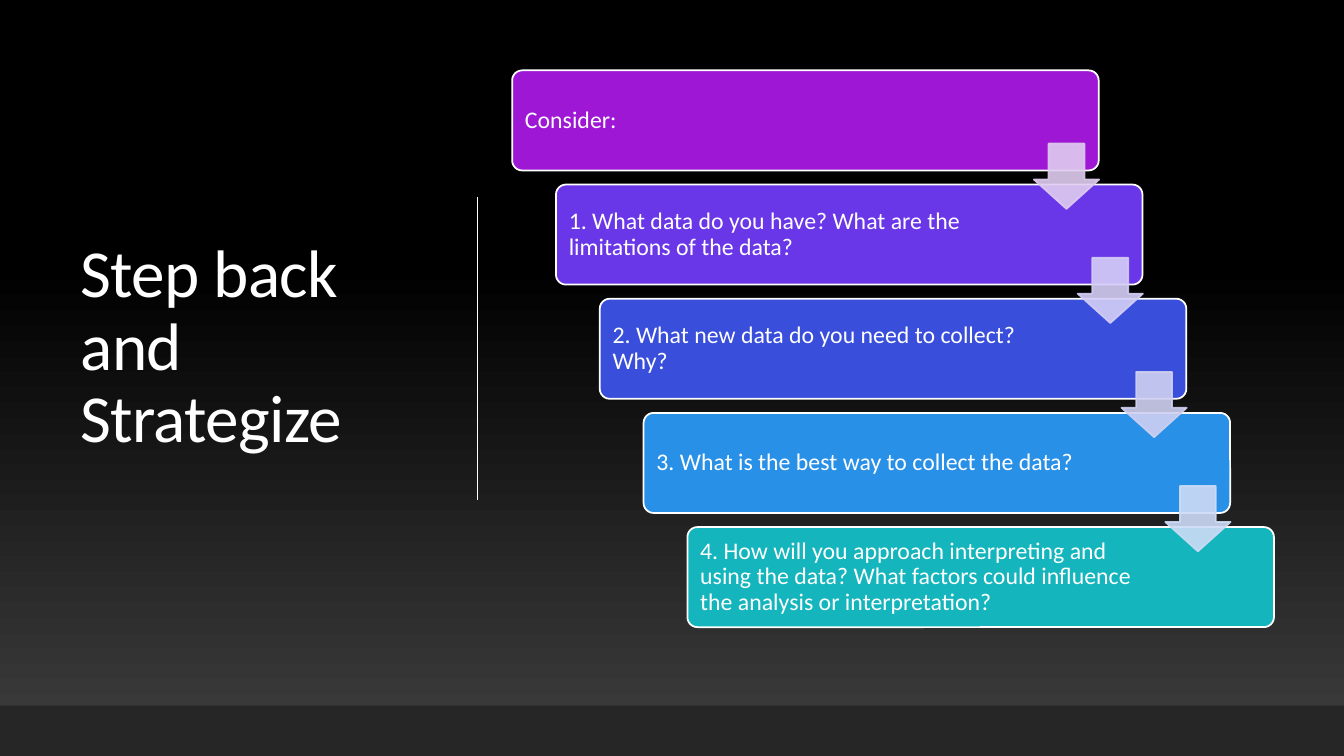
from dataclasses import dataclass

from lxml import etree
from pptx import Presentation
from pptx.dml.color import RGBColor
from pptx.enum.shapes import MSO_CONNECTOR, MSO_SHAPE
from pptx.enum.text import MSO_ANCHOR, MSO_AUTO_SIZE, PP_ALIGN
from pptx.oxml.ns import qn
from pptx.util import Pt

RECT = MSO_SHAPE.RECTANGLE
ROUND_RECT = MSO_SHAPE.ROUNDED_RECTANGLE
DOWN_ARROW = MSO_SHAPE.DOWN_ARROW
STRAIGHT = MSO_CONNECTOR.STRAIGHT
LEFT = PP_ALIGN.LEFT
MIDDLE = MSO_ANCHOR.MIDDLE
NO_FIT = MSO_AUTO_SIZE.NONE

SLIDE_W, SLIDE_H = 960, 540


@dataclass(frozen=True)
class Theme:
    font: str = "Calibri"
    title_size: float = 48
    body_size: float = 17
    text: str = "FFFFFF"
    line: str = "FFFFFF"
    glow: str = "3F3F3F"
    dark: str = "000000"
    footer: str = "262626"
    cards: tuple = ("9D17D5", "6A37E8", "394EDB", "2990E7", "14B5BC")
    arrows: tuple = ("DFCCEF", "D4CEF6", "CED0F1", "CDDBF6")


def rgb(value):
    return RGBColor.from_string(value)


def write_text(tf, text, *, font, size, color, insets, tracking=None):
    tf.word_wrap = True
    tf.auto_size = NO_FIT
    tf.vertical_anchor = MIDDLE
    tf.margin_left, tf.margin_top, tf.margin_right, tf.margin_bottom = map(Pt, insets)
    p = tf.paragraphs[0]
    p.alignment = LEFT
    p.line_spacing = 0.9
    r = p.add_run()
    r.text = text
    r.font.name = font
    r.font.size = Pt(size)
    r.font.color.rgb = rgb(color)
    if tracking is not None:
        r.font._element.set("spc", str(round(tracking * 100)))


class Deck:
    def __init__(self, prs, theme):
        self.theme = theme
        self.s = prs.slides.add_slide(prs.slide_layouts[5])

    def background(self):
        fill = self.s.background.fill
        fill.gradient()
        fill.gradient_angle = 90
        stops = ((0, self.theme.glow), (0.65, self.theme.dark))
        for stop, (position, color) in zip(fill.gradient_stops, stops):
            stop.position = position
            stop.color.rgb = rgb(color)

    def title(self, text, x, y, w, h):
        sp = self.s.shapes.title
        sp.left, sp.top, sp.width, sp.height = map(Pt, (x, y, w, h))
        write_text(sp.text_frame, text, font=self.theme.font, size=self.theme.title_size,
                   color=self.theme.text, insets=(7.2, 3.6, 7.2, 3.6), tracking=-0.5)

    def rule(self, x1, y1, x2, y2):
        sp = self.s.shapes.add_connector(STRAIGHT, Pt(x1), Pt(y1), Pt(x2), Pt(y2))
        sp.line.color.rgb = rgb(self.theme.line)
        sp.line.width = Pt(1)
        etree.SubElement(sp._element.spPr, qn("a:effectLst"))

    def shape(self, kind, x, y, w, h, fill, line=None, adjust=()):
        sp = self.s.shapes.add_shape(kind, Pt(x), Pt(y), Pt(w), Pt(h))
        sp.shadow.inherit = False
        for i, value in enumerate(adjust):
            sp.adjustments[i] = value
        sp.fill.solid()
        sp.fill.fore_color.rgb = rgb(fill)
        if line:
            sp.line.color.rgb = rgb(line)
            sp.line.width = Pt(1.25)
        else:
            sp.line.fill.background()
        return sp

    def card(self, text, x, y, w, h, fill):
        sp = self.shape(ROUND_RECT, x, y, w, h, fill, self.theme.line, (0.1,))
        write_text(sp.text_frame, text, font=self.theme.font, size=self.theme.body_size,
                   color=self.theme.text, insets=(7.2, 7.2, 85, 7.2))

    def arrow(self, x, y, size, color):
        sp = self.shape(DOWN_ARROW, x, y, size, size, color, color, (0.55, 0.45))
        for clr in sp._element.spPr.iter(qn("a:srgbClr")):
            etree.SubElement(clr, qn("a:alpha")).set("val", "90000")


def main():
    prs = Presentation()
    prs.slide_width, prs.slide_height = Pt(SLIDE_W), Pt(SLIDE_H)
    theme = Theme()
    deck = Deck(prs, theme)
    deck.background()
    deck.title("Step back and Strategize", 50.4, 49.7, 265.7, 398.2)
    deck.rule(341.3, 141, 341.3, 357)
    deck.shape(RECT, 0, 504, SLIDE_W, 36, theme.footer)

    steps = (
        "Consider:",
        "1. What data do you have? What are the limitations of the data?",
        "2. What new data do you need to collect? Why?",
        "3. What is the best way to collect the data?",
        "4. How will you approach interpreting and using the data? "
        "What factors could influence the analysis or interpretation?",
    )
    left, top, dx, dy = 365.8, 50.3, 31.3, 81.55
    for i, (text, color) in enumerate(zip(steps, theme.cards)):
        deck.card(text, left + i * dx, top + i * dy, 419, 71.5, color)
    for i, color in enumerate(theme.arrows):
        deck.arrow(left + 372.7 + i * dx, top + 52.3 + i * dy, 46.6, color)

    prs.save("out.pptx")


if __name__ == "__main__":
    main()
